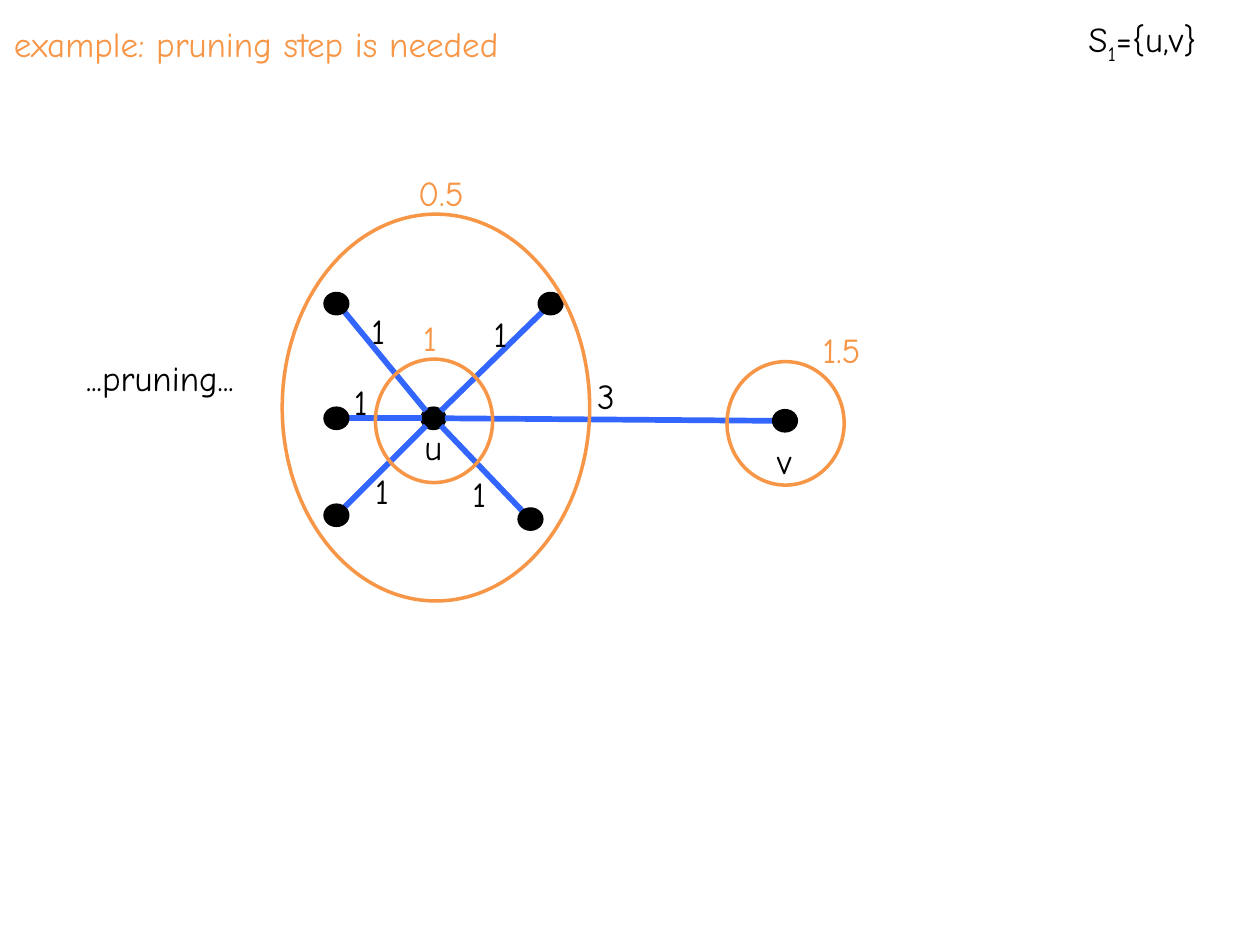
from pptx import Presentation
from pptx.dml.color import RGBColor
from pptx.enum.shapes import MSO_CONNECTOR, MSO_SHAPE
from pptx.enum.text import MSO_ANCHOR, MSO_AUTO_SIZE, PP_ALIGN
from pptx.oxml.ns import qn
from pptx.util import Pt

PX = 9144  # 100 px to the inch
OVAL = MSO_SHAPE.OVAL
LINE = MSO_CONNECTOR.STRAIGHT
TOP = MSO_ANCHOR.TOP
FIT = MSO_AUTO_SIZE.SHAPE_TO_FIT_TEXT
NOFIT = MSO_AUTO_SIZE.NONE
LEFT, MID = PP_ALIGN.LEFT, PP_ALIGN.CENTER

rgb = RGBColor.from_string
BLACK, BLUE, ORANGE = "000000", "3366FF", "F79646"

prs = Presentation()
prs.slide_width, prs.slide_height = 1000 * PX, 750 * PX
slide = prs.slides.add_slide(prs.slide_layouts[5])
shapes = slide.shapes


def oval(x, y, w, h, color, solid):
    shape = shapes.add_shape(OVAL, x * PX, y * PX, w * PX, h * PX)
    shape.shadow.inherit = False
    if solid:
        shape.fill.solid()
        shape.fill.fore_color.rgb = rgb(color)
    else:
        shape.fill.background()
    shape.line.color.rgb = rgb(color)
    shape.line.width = Pt(2)


def label(text, x, y, w, color=BLACK, align=LEFT, box=None):
    if box is None:
        box = shapes.add_textbox(0, 0, 0, 0)
    box.left, box.top, box.width, box.height = x * PX, y * PX, w * PX, 44 * PX
    frame = box.text_frame
    frame.text = text
    frame.word_wrap = True
    frame.auto_size = FIT if box.is_placeholder is False else NOFIT
    frame.vertical_anchor = TOP
    para = frame.paragraphs[0]
    para.alignment = align
    for run in para.runs:
        run.font.name = "Comic Neue"
        run.font.size = Pt(20)
        run.font.color.rgb = rgb(color)
    return para


# Title
label("example: pruning step is needed", 1, 13, 467, ORANGE, box=shapes.title)

# Graph: node u in the middle, an edge out to each other node
DOT_W, DOT_H = 18, 16
ux, uy = 335, 324
oval(ux, uy, DOT_W, DOT_H, BLACK, True)

# Node left and top, side of u it leaves from, weight and its label box
edges = [
    (258, 233, -1, -1, "1", 285, 241, 33),
    (614, 326, 1, 0, "3", 464, 292, 33),
    (258, 401, -1, 1, "1", 288, 368, 33),
    (428, 233, 1, -1, "1", 382, 243, 37),
    (412, 404, 1, 1, "1", 365, 370, 37),
    (258, 324, -1, 0, "1", 271, 297, 33),
]
for x, y, dx, dy, weight, tx, ty, tw in edges:
    # Ends sit on the rim: a side point, or the 45 degree point
    rim_x, rim_y = (6 * dx, 6 * dy) if dy else (9 * dx, 0)
    cx, cy = DOT_W // 2, DOT_H // 2
    edge = shapes.add_connector(
        LINE,
        (ux + cx + rim_x) * PX, (uy + cy + rim_y) * PX,
        (x + cx - rim_x) * PX, (y + cy - rim_y) * PX)
    edge.line.color.rgb = rgb(BLUE)
    edge.line.width = Pt(3.25)
    props = edge._element.spPr
    props.append(props.makeelement(qn("a:effectLst"), {}))
    oval(x, y, DOT_W, DOT_H, BLACK, True)
    label(weight, tx, ty, tw)

# Node names
label("u", 327, 333, 33)
label("v", 607, 344, 33)

# Rings with their radii
rings = [
    (298, 285, 93, 98, "1", 326, 246, 33),
    (577, 287, 93, 98, "1.5", 643, 256, 64),
    (224, 170, 244, 307, "0.5", 322, 131, 64),
]
for x, y, w, h, size, tx, ty, tw in rings:
    oval(x, y, w, h, ORANGE, False)
    label(size, tx, ty, tw, ORANGE)

# Step note
label("...pruning...", 37, 278, 180, align=MID)

# Set, with a subscript index
para = label("S", 854, 9, 128)
for part, base in (("1", "-25000"), ("={u,v}", "0")):
    run = para.add_run()
    run.text = part
    run.font.name = "Comic Neue"
    run.font.size = Pt(20)
    run.font.color.rgb = rgb(BLACK)
    run._r.get_or_add_rPr().set("baseline", base)

prs.save("out.pptx")
